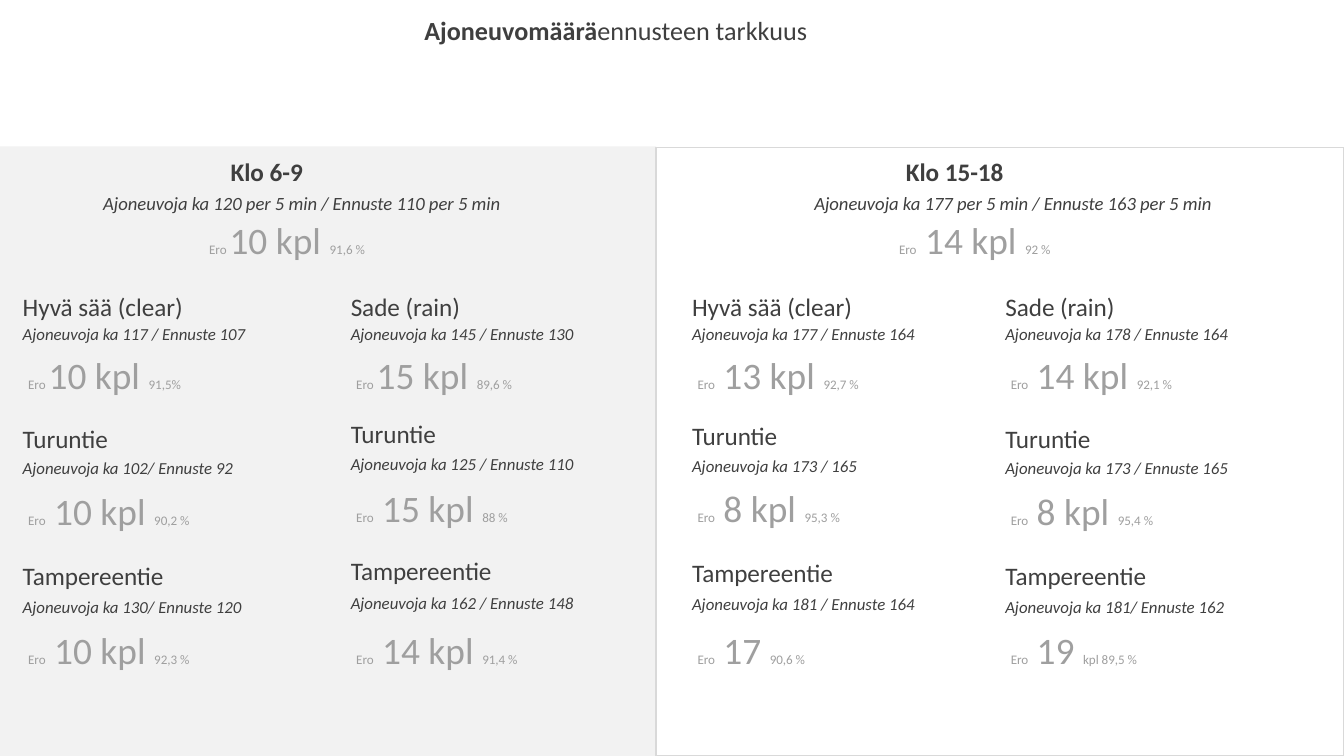
from pptx import Presentation
from pptx.dml.color import RGBColor
from pptx.enum.shapes import MSO_SHAPE
from pptx.enum.text import MSO_ANCHOR, MSO_AUTO_SIZE, PP_ALIGN
from pptx.util import Cm, Pt

RECTANGLE = MSO_SHAPE.RECTANGLE
ROUNDED = MSO_SHAPE.ROUNDED_RECTANGLE
MIDDLE = MSO_ANCHOR.MIDDLE
GROW = MSO_AUTO_SIZE.SHAPE_TO_FIT_TEXT
LEFT = PP_ALIGN.LEFT

PERIODS = [
    (("Klo 6-9", 4.11, 2.62),
     ("Ajoneuvoja ka 120 per 5 min / Ennuste 110 per 5 min", 1.7),
     (("Ero ", "10 kpl ", "91,6 %"), 3.6, 5.28)),
    (("Klo 15-18", 16.87, 3.84),
     ("Ajoneuvoja ka 177 per 5 min / Ennuste 163 per 5 min", 15.14),
     (("Ero", " 14 kpl ", "92 %"), 16.64, 5.44)),
]

ROWS = [(5.38, 5.99, 6.02), (7.87, 8.53, 8.59), (10.46, 11.15, 11.23)]

COLUMNS = [
    (0.18, 0, [
        ("Hyvä sää (clear)", 4.17, "Ajoneuvoja ka 117 / Ennuste 107", 4.75,
         ("Ero ", "10 kpl ", "91,5%"), 5.72),
        ("Turuntie", 3.91, "Ajoneuvoja ka 102/ Ennuste 92", 4.52,
         ("Ero", " 10 kpl ", "90,2 %"), 6.45),
        ("Tampereentie", 4.85, "Ajoneuvoja ka 130/ Ennuste 120", 4.85,
         ("Ero", " 10 kpl ", "92,3 %"), 6.12)]),
    (6.38, 0.08, [
        ("Sade (rain)", 3.35, "Ajoneuvoja ka 145 / Ennuste 130", 4.75,
         ("Ero ", "15 kpl ", "89,6 %"), 5.72),
        ("Turuntie", 3.91, "Ajoneuvoja ka 125 / Ennuste 110", 4.75,
         ("Ero", " 15 kpl ", "88 %"), 6.45),
        ("Tampereentie", 4.85, "Ajoneuvoja ka 162 / Ennuste 148", 4.75,
         ("Ero", " 14 kpl ", "91,4 %"), 6.12)]),
    (12.83, 0.05, [
        ("Hyvä sää (clear)", 5.18, "Ajoneuvoja ka 177 / Ennuste 164", 8.08,
         ("Ero", " 13 kpl ", "92,7 %"), 8.41),
        ("Turuntie", 3.91, "Ajoneuvoja ka 173 / 165", 3.66,
         ("Ero", " 8 kpl ", "95,3 %"), 8.71),
        ("Tampereentie", 4.85, "Ajoneuvoja ka 181 / Ennuste 164", 4.75,
         ("Ero", " 17 ", "90,6 %"), 6.02)]),
    (18.75, 0, [
        ("Sade (rain)", 5.18, "Ajoneuvoja ka 178 / Ennuste 164", 6.65,
         ("Ero", " 14 kpl ", "92,1 %"), 6.65),
        ("Turuntie", 3.91, "Ajoneuvoja ka 173 / Ennuste 165", 4.75,
         ("Ero", " 8 kpl ", "95,4 %"), 6.43),
        ("Tampereentie", 4.85, "Ajoneuvoja ka 181/ Ennuste 162", 4.67,
         ("Ero", " 19 ", "kpl 89,5 %"), 6.02)]),
]


def colour(value):
    return RGBColor.from_string(value)


class ForecastSlide:
    """Holds the style of the forecast slide and draws its elements."""

    font = "Calibri"
    ink = "3F3F3F"
    muted = "9F9F9F"

    def __init__(self, slide):
        self.slide = slide

    def shape(self, kind, left, top, width, height, fill=None, line=None):
        shape = self.slide.shapes.add_shape(
            kind, Cm(left), Cm(top), Cm(width), Cm(height))
        shape.shadow.inherit = False
        if fill:
            shape.fill.solid()
            shape.fill.fore_color.rgb = colour(fill)
        else:
            shape.fill.background()
        if line:
            shape.line.color.rgb = colour(line)
            shape.line.width = Pt(0.85)
        else:
            shape.line.fill.background()
        return shape

    def run(self, paragraph, text, size, ink, bold=False, italic=False):
        run = paragraph.add_run()
        run.text = text
        run.font.name = self.font
        run.font.size = Pt(size)
        run.font.bold = bold
        run.font.italic = italic
        run.font.color.rgb = colour(ink)

    def text_box(self, left, top, width, height, wrap=True):
        box = self.slide.shapes.add_textbox(
            Cm(left), Cm(top), Cm(width), Cm(height))
        box.text_frame.word_wrap = wrap
        box.text_frame.auto_size = GROW
        return box.text_frame.paragraphs[0]

    def title(self, strong, rest):
        paragraph = self.text_box(7.77, 0.15, 8.84, 0.86)
        self.run(paragraph, strong, 14, self.ink, bold=True)
        self.run(paragraph, rest, 14, self.ink)

    def heading(self, text, left, top, width, bold=False):
        paragraph = self.text_box(left, top, width, 0.84)
        self.run(paragraph, text, 13.5, self.ink, bold=bold)

    def caption(self, text, left, top, width, height=0.64, size=9, wrap=False):
        paragraph = self.text_box(left, top, width, height, wrap)
        self.run(paragraph, text, size, self.ink, italic=True)

    def difference(self, parts, left, top, width):
        frame = self.shape(ROUNDED, left, top, width, 2.11).text_frame
        frame.word_wrap = True
        frame.vertical_anchor = MIDDLE
        paragraph = frame.paragraphs[0]
        paragraph.alignment = LEFT
        for part, size in zip(parts, (7, 20, 7)):
            self.run(paragraph, part, size, self.muted)


def main():
    presentation = Presentation()
    presentation.slide_width = Cm(25.4)
    presentation.slide_height = Cm(14.29)
    page = ForecastSlide(
        presentation.slides.add_slide(presentation.slide_layouts[6]))

    page.shape(RECTANGLE, 0, 2.77, 12.4, 11.52, fill="F2F2F2")
    page.shape(RECTANGLE, 12.4, 2.79, 13, 11.5, line="D9D9D9")
    page.title("Ajoneuvomäärä", "ennusteen tarkkuus")

    for (hours, hours_left, hours_width), (summary, summary_left), total in PERIODS:
        parts, total_left, total_width = total
        page.heading(hours, hours_left, 2.84, hours_width, bold=True)
        page.caption(summary, summary_left, 3.5, 8.13, 0.69, size=10)
        page.difference(parts, total_left, 3.48, total_width)

    for left, lift, cells in COLUMNS:
        for row, (tops, cell) in enumerate(zip(ROWS, cells)):
            heading_top, caption_top, difference_top = tops
            place, place_width, counts, counts_width, parts, parts_width = cell
            text_lift = lift if row else 0
            figure_lift = 0.05 if lift and row == 1 else 0
            page.heading(place, left, heading_top - text_lift, place_width)
            page.caption(counts, left, caption_top - text_lift, counts_width,
                         wrap=counts_width > 6)
            page.difference(parts, left, difference_top - figure_lift,
                            parts_width)

    presentation.save("out.pptx")


if __name__ == "__main__":
    main()
